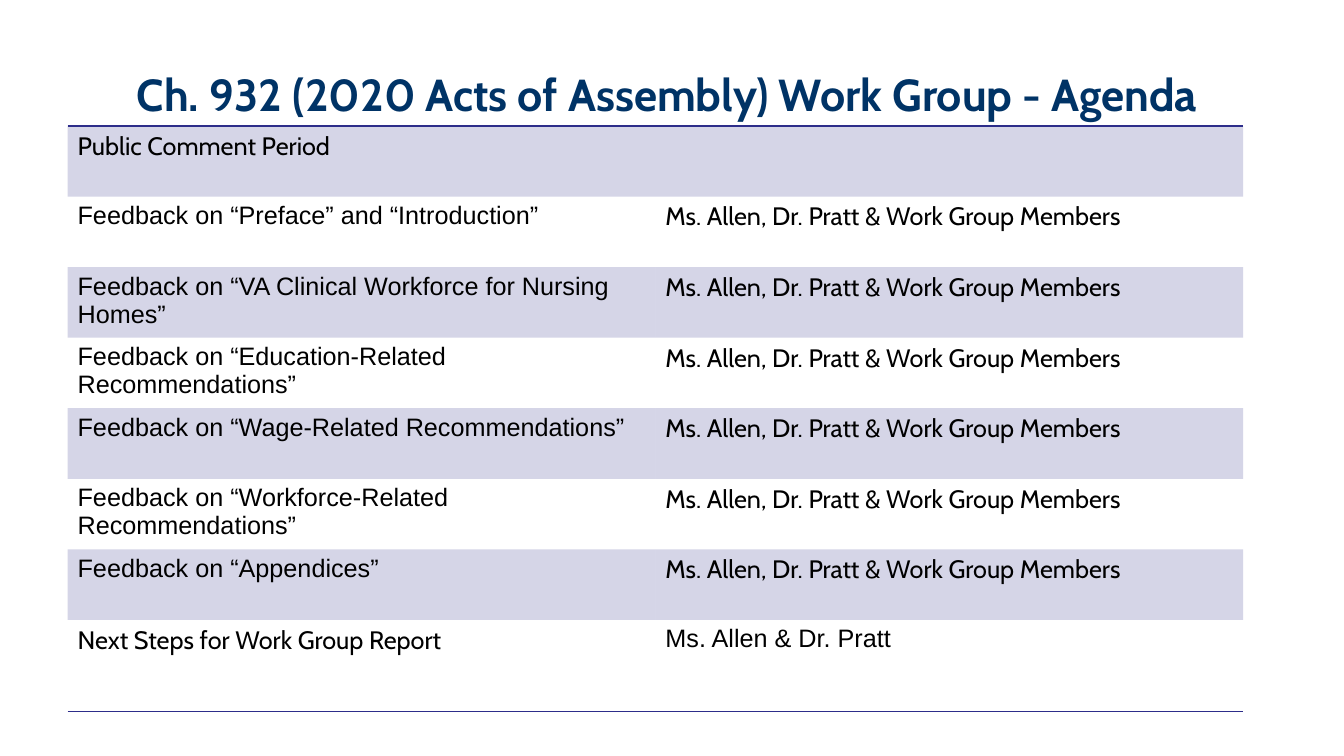
"""Build the work group agenda slide."""
from lxml import etree
from pptx import Presentation
from pptx.dml.color import RGBColor
from pptx.enum.text import MSO_ANCHOR, PP_ALIGN
from pptx.oxml.ns import qn
from pptx.util import Inches, Pt

MIDDLE = MSO_ANCHOR.MIDDLE
CENTER = PP_ALIGN.CENTER
PLAIN = "{2D5ABB26-0587-4C30-8999-92F81FD0307C}"
THEME = {
    "rule": "2D2D8A",
    "alpha": "20000",
    "title": {"name": "Cabin", "size": Pt(32), "bold": True, "color": "003366"},
    "Cabin": {"name": "Cabin", "size": Pt(18), "bold": False, "color": "000000"},
    "Arial": {"name": "Arial", "size": Pt(18), "bold": False, "color": "000000"},
}
TEAM = ("Ms. Allen, Dr. Pratt & Work Group Members", "Cabin")
TOPICS = [
    "Preface” and “Introduction",
    "VA Clinical Workforce for Nursing Homes",
    "Education-Related Recommendations",
    "Wage-Related Recommendations",
    "Workforce-Related Recommendations",
    "Appendices",
]
AGENDA = [
    [("Public Comment Period", "Cabin")],
    *[[(f"Feedback on “{topic}”", "Arial"), TEAM] for topic in TOPICS],
    [("Next Steps for Work Group Report", "Cabin"), ("Ms. Allen & Dr. Pratt", "Arial")],
]


def write(frame, text, style):
    para = frame.paragraphs[0]
    run = para.add_run()
    run.text = text
    for key, value in THEME[style].items():
        if key == "color":
            run.font.color.rgb = RGBColor.from_string(value)
        else:
            setattr(run.font, key, value)
    return para


def edge(cell, side):
    line = etree.Element(qn(f"a:{side}"), w=str(Pt(1)))
    fill = etree.SubElement(line, qn("a:solidFill"))
    etree.SubElement(fill, qn("a:srgbClr"), val=THEME["rule"])
    cell._tc.get_or_add_tcPr().insert(0, line)


deck = Presentation()
deck.slide_width, deck.slide_height = Inches(13.33), Inches(7.5)
slide = deck.slides.add_slide(deck.slide_layouts[5])

title = slide.shapes.title
place = {"left": 0.67, "top": 0.3, "width": 12, "height": 1.25}
for key, value in place.items():
    setattr(title, key, Inches(value))
title.text_frame.vertical_anchor = MIDDLE
head = write(title.text_frame, "Ch. 932 (2020 Acts of Assembly) Work Group - Agenda ", "title")
head.alignment = CENTER

last = len(AGENDA) - 1
frame = slide.shapes.add_table(
    len(AGENDA), 2, Inches(0.67), Inches(1.25), Inches(11.67), Inches(5.79))
table = frame.table
table.first_row = table.horz_banding = False
table._tbl.tblPr.find(qn("a:tableStyleId")).text = PLAIN
for col in table.columns:
    col.width = Inches(5.83)
table.cell(0, 0).merge(table.cell(0, 1))

for row, items in enumerate(AGENDA):
    table.rows[row].height = Inches(0.91 if row == last else 0.7)
    for col, item in enumerate(items):
        write(table.cell(row, col).text_frame, *item)
    for cell in table.rows[row].cells:
        if row % 2:
            cell.fill.background()
        else:
            cell.fill.solid()
            cell.fill.fore_color.rgb = RGBColor.from_string(THEME["rule"])
            tint = cell._tc.tcPr.find(qn("a:solidFill"))[0]
            etree.SubElement(tint, qn("a:alpha"), val=THEME["alpha"])
        if row == 0:
            edge(cell, "lnT")
        if row == last:
            edge(cell, "lnB")

deck.save("out.pptx")
